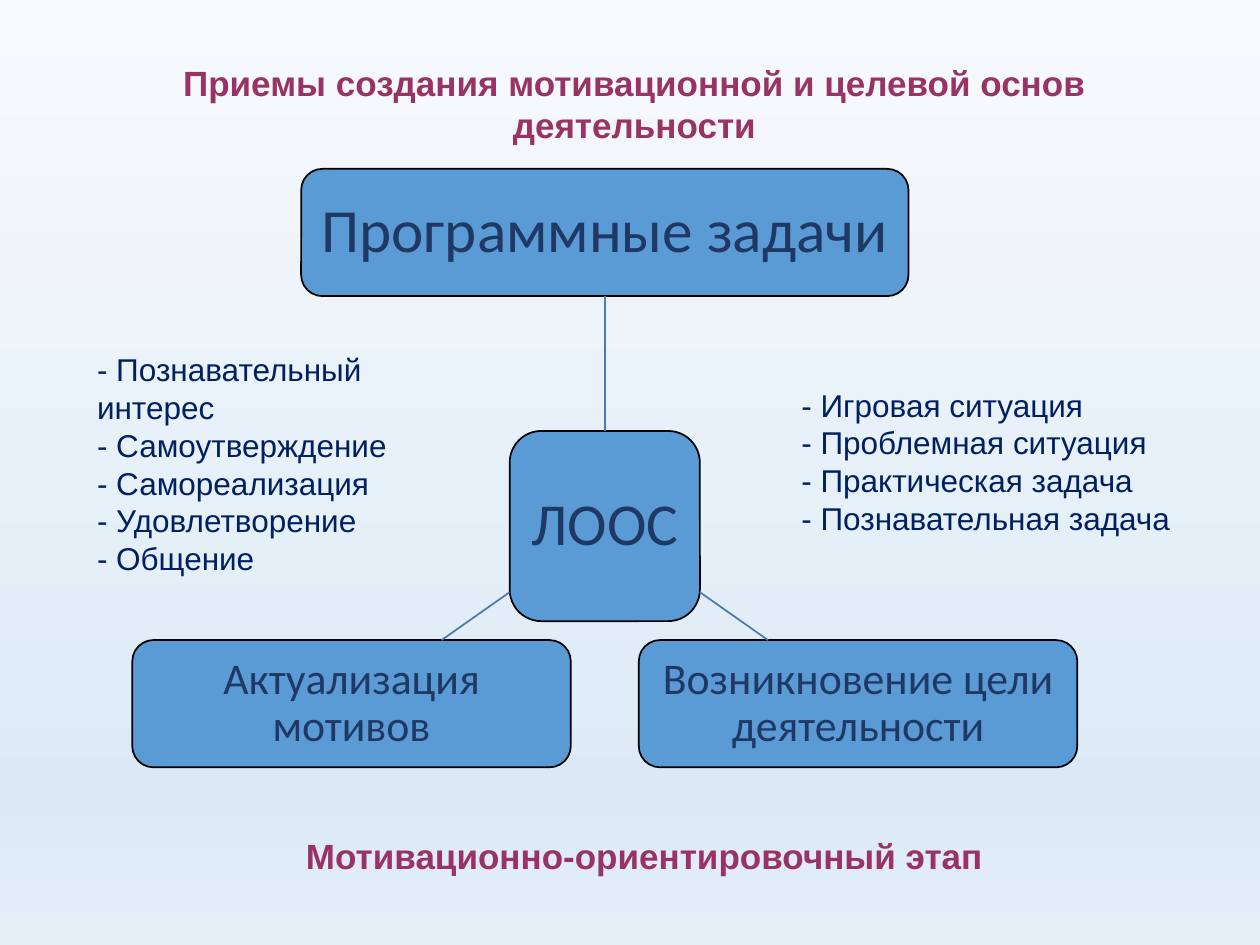
from copy import deepcopy
from dataclasses import dataclass

from lxml import etree
from pptx import Presentation
from pptx.dml.color import RGBColor
from pptx.enum.shapes import MSO_CONNECTOR, MSO_SHAPE
from pptx.enum.text import MSO_ANCHOR, MSO_AUTO_SIZE, PP_ALIGN
from pptx.oxml.ns import qn
from pptx.util import Inches, Pt

ROUNDED = MSO_SHAPE.ROUNDED_RECTANGLE
STRAIGHT = MSO_CONNECTOR.STRAIGHT
TOP, MIDDLE = MSO_ANCHOR.TOP, MSO_ANCHOR.MIDDLE
LEFT, CENTER = PP_ALIGN.LEFT, PP_ALIGN.CENTER
TWO_CONTENT = 3


@dataclass(frozen=True)
class Theme:
    heading: str = "993366"
    list_text: str = "002060"
    node_text: str = "203864"
    node_fill: str = "5B9BD5"
    node_line: str = "000000"
    link: str = "497CAB"
    background: tuple = ((0, "F7FAFD"), (74, "E0ECF7"),
                         (83, "DBE9F6"), (100, "E5EFF8"))
    text_font: str = "Arial"
    node_font: str = "Calibri"
    heading_size: int = 20
    list_size: int = 18
    hub_size: int = 34
    tasks_size: int = 35
    branch_size: int = 25


THEME = Theme()


def rgb(value):
    return RGBColor.from_string(value)


def place(shape, box):
    shape.left, shape.top, shape.width, shape.height = map(Inches, box)


def format_text(frame, font, size, color, align, bold=False, spacing=1.0):
    frame.word_wrap = True
    for paragraph in frame.paragraphs:
        paragraph.alignment = align
        paragraph.line_spacing = spacing
        paragraph.space_before = paragraph.space_after = Pt(0)
        for run in paragraph.runs:
            run.font.name = font
            run.font.size = Pt(size)
            run.font.bold = bold
            run.font.color.rgb = rgb(color)


def paint_background(slide):
    fill = slide.background.fill
    fill.gradient()
    fill.gradient_angle = 270  # light at the top
    stops = next(slide.element.iter(qn("a:gsLst")))
    while len(stops) < len(THEME.background):
        stops.append(deepcopy(stops[0]))
    for stop, (position, color) in zip(fill.gradient_stops, THEME.background):
        stop.position = position / 100
        stop.color.rgb = rgb(color)


def add_heading(shape, box, text):
    place(shape, box)
    frame = shape.text_frame
    frame.text = text
    frame.vertical_anchor = TOP
    frame.auto_size = MSO_AUTO_SIZE.SHAPE_TO_FIT_TEXT
    format_text(frame, THEME.text_font, THEME.heading_size, THEME.heading,
                CENTER, bold=True)


def add_list(placeholder, box, items):
    place(placeholder, box)
    frame = placeholder.text_frame
    frame.text = "\n".join(items)
    frame.vertical_anchor = TOP
    frame.auto_size = MSO_AUTO_SIZE.SHAPE_TO_FIT_TEXT
    format_text(frame, THEME.text_font, THEME.list_size, THEME.list_text, LEFT)
    # The dashes are typed, so the template's bullets and indents go
    for paragraph in frame.paragraphs:
        properties = paragraph._p.get_or_add_pPr()
        properties.set("marL", "0")
        properties.set("indent", "0")
        etree.SubElement(properties, qn("a:buNone"))


def add_node(slide, box, text, size):
    node = slide.shapes.add_shape(ROUNDED, *map(Inches, box))
    node.shadow.inherit = False
    node.fill.solid()
    node.fill.fore_color.rgb = rgb(THEME.node_fill)
    node.line.color.rgb = rgb(THEME.node_line)
    node.line.width = Pt(1)
    frame = node.text_frame
    frame.text = text
    frame.vertical_anchor = MIDDLE
    frame.margin_left = frame.margin_right = Inches(0.07)
    frame.margin_top = frame.margin_bottom = Inches(0.07)
    format_text(frame, THEME.node_font, size, THEME.node_text, CENTER,
                spacing=0.9)


def add_link(slide, start, end):
    link = slide.shapes.add_connector(STRAIGHT, *map(Inches, start + end))
    link.line.color.rgb = rgb(THEME.link)
    link.line.width = Pt(1)
    etree.SubElement(link._element.spPr, qn("a:effectLst"))


def add_diagram(slide, box):
    left, top, width, height = box
    center, bottom = left + width / 2, top + height
    hub, node_height, tasks_width, branch_width = 1.51, 1.01, 4.82, 3.48
    hub_left, hub_top = center - hub / 2, top + 2.08
    branch_top = bottom - node_height

    # Hub and the tasks above it
    add_node(slide, (hub_left, hub_top, hub, hub), "ЛООС", THEME.hub_size)
    add_node(slide, (center - tasks_width / 2, top, tasks_width, node_height),
             "Программные задачи", THEME.tasks_size)
    add_link(slide, (center, hub_top), (center, top + node_height))

    # Two branches, mirrored about the hub
    branches = ((-1, left, "Актуализация мотивов"),
                (1, left + width - branch_width,
                 "Возникновение цели деятельности"))
    for side, branch_left, text in branches:
        add_node(slide, (branch_left, branch_top, branch_width, node_height),
                 text, THEME.branch_size)
        add_link(slide, (center + side * hub / 2, branch_top - 0.38),
                 (center + side * (hub / 2 + 0.54), branch_top))


def main():
    deck = Presentation()
    deck.slide_width, deck.slide_height = Inches(10), Inches(7.5)
    slide = deck.slides.add_slide(deck.slide_layouts[TWO_CONTENT])
    paint_background(slide)

    title, motives, situations = slide.placeholders
    add_heading(title, (0.35, 0.44, 9.37, 0.44),
                "Приемы создания мотивационной и целевой основ деятельности")
    add_diagram(slide, (1.05, 1.34, 7.5, 4.75))
    add_list(situations, (6.26, 3.01, 3.15, 1.31),
             ("- Игровая ситуация", "- Проблемная ситуация",
              "- Практическая задача", "- Познавательная задача"))
    add_list(motives, (0.67, 2.73, 2.76, 1.92),
             ("- Познавательный интерес", "- Самоутверждение",
              "- Самореализация", "- Удовлетворение", "- Общение"))

    stage_box = (0.43, 6.57, 9.37, 0.44)
    stage = slide.shapes.add_textbox(*map(Inches, stage_box))
    add_heading(stage, stage_box, "Мотивационно-ориентировочный этап")

    deck.save("out.pptx")


if __name__ == "__main__":
    main()
